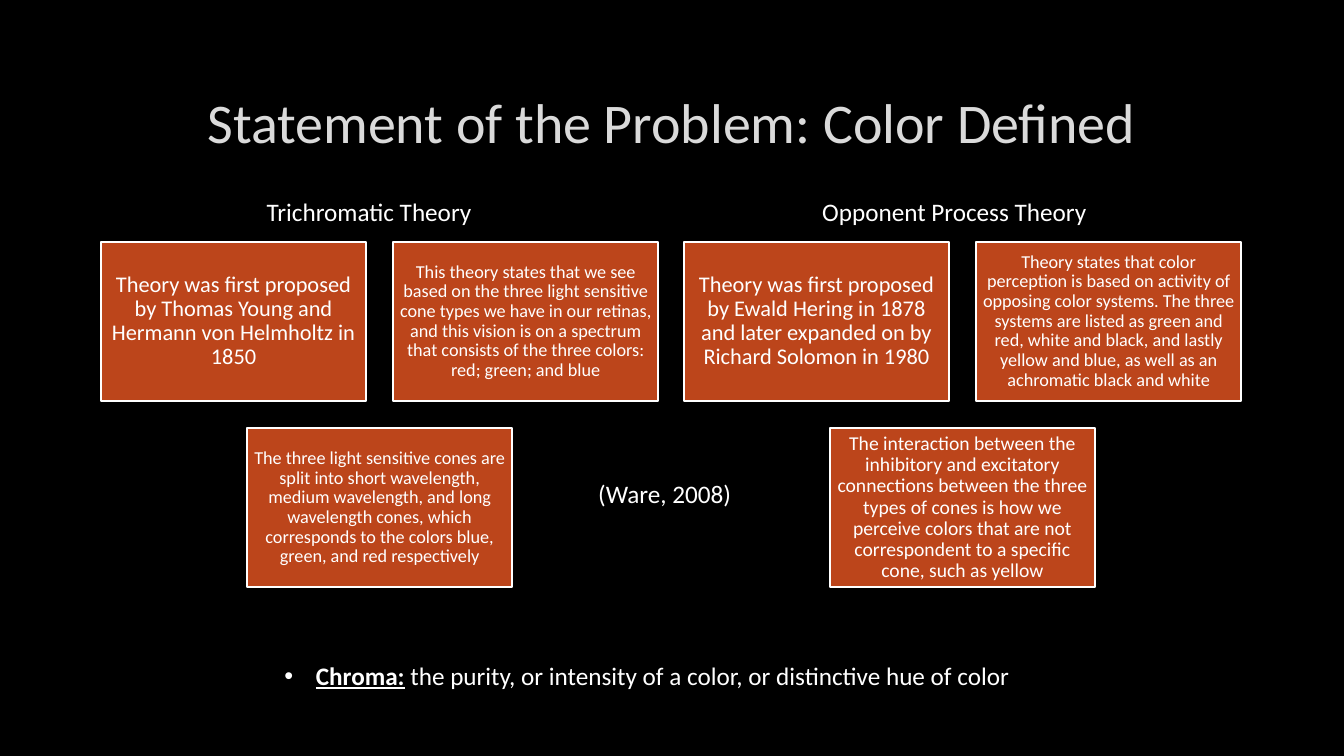
"""Build the slide that compares two theories of color vision."""
from lxml.etree import SubElement
from pptx import Presentation
from pptx.dml.color import RGBColor
from pptx.enum.shapes import MSO_SHAPE as Shape
from pptx.enum.text import MSO_ANCHOR as Anchor, PP_ALIGN as Align
from pptx.oxml import parse_xml
from pptx.oxml.ns import nsdecls, qn
from pptx.util import Pt


def color(hex_code):
    return RGBColor.from_string(hex_code)


def write(frame, text, size, hex_code="FFFFFF", align=Align.LEFT):
    frame.text = text
    frame.word_wrap = True
    paragraph = frame.paragraphs[0]
    paragraph.alignment = align
    run = paragraph.runs[0]
    run.font.name = "Calibri"
    run.font.size = Pt(size)
    run.font.color.rgb = color(hex_code)
    return paragraph


deck = Presentation()
deck.slide_width, deck.slide_height = Pt(960), Pt(540)
slide = deck.slides.add_slide(deck.slide_layouts[6])
slide.background.fill.solid()
slide.background.fill.fore_color.rgb = color("000000")

title = slide.shapes.add_textbox(Pt(72), Pt(48), Pt(815), Pt(76.5)).text_frame
title.vertical_anchor = Anchor.MIDDLE
heading = write(title, "Statement of the Problem: Color Defined", 40, "DADADA", Align.CENTER)
heading.runs[0].font._element.insert(0, parse_xml(
    f'<a:ln {nsdecls("a")} w="9525"><a:solidFill><a:srgbClr val="404040">'
    '<a:alpha val="10000"/></a:srgbClr></a:solidFill></a:ln>'))

CARD_WIDTH, CARD_HEIGHT = 189.7, 113.8
CARD_SPOTS = [(0, 0), (208.6, 0), (104.3, 133.1)]
TOP = 172.6
theories = [
    (72, [
        ("Theory was first proposed by Thomas Young and Hermann von Helmholtz in 1850", 16, 4.8),
        ("This theory states that we see based on the three light sensitive cone types we have "
         "in our retinas, and this vision is on a spectrum that consists of the three colors: "
         "red; green; and blue", 13, 3.9),
        ("The three light sensitive cones are split into short wavelength, medium wavelength, "
         "and long wavelength cones, which corresponds to the colors blue, green, and red "
         "respectively", 13, 3.9),
    ]),
    (488.4, [
        ("Theory was first proposed by Ewald Hering in 1878 and later expanded on by Richard "
         "Solomon in 1980", 16, 4.8),
        ("Theory states that color perception is based on activity of opposing color systems. "
         "The three systems are listed as green and red, white and black, and lastly yellow and "
         "blue, as well as an achromatic black and white", 13, 3.9),
        ("The interaction between the inhibitory and excitatory connections between the three "
         "types of cones is how we perceive colors that are not correspondent to a specific "
         "cone, such as yellow", 14, 4.2),
    ]),
]
for theory_left, statements in theories:
    for (across, down), (statement, size, inset) in zip(CARD_SPOTS, statements):
        card = slide.shapes.add_shape(Shape.RECTANGLE, Pt(theory_left + across), Pt(TOP + down),
                                      Pt(CARD_WIDTH), Pt(CARD_HEIGHT))
        card.shadow.inherit = False
        card.fill.solid()
        card.fill.fore_color.rgb = color("BC451B")
        card.line.color.rgb = color("FFFFFF")
        card.line.width = Pt(1.25)
        frame = card.text_frame
        frame.margin_left = frame.margin_right = Pt(inset)
        frame.margin_top = frame.margin_bottom = Pt(inset)
        frame.vertical_anchor = Anchor.MIDDLE
        write(frame, statement, size, align=Align.CENTER).line_spacing = 0.9

labels = [
    ("Trichromatic Theory", 183.4, 137, 176),
    ("Opponent Process Theory", 580.2, 137, 215),
    ("(Ware, 2008)", 420.2, 338, 119),
]
for label, left, top, width in labels:
    write(slide.shapes.add_textbox(Pt(left), Pt(top), Pt(width), Pt(29)).text_frame, label, 18)

chroma = slide.shapes.add_textbox(Pt(196), Pt(468), Pt(567), Pt(29)).text_frame
definition = write(chroma, "Chroma:", 18)
term = definition.runs[0].font
term.bold = term.underline = True
meaning = definition.add_run()
meaning.text = " the purity, or intensity of a color, or distinctive hue of color"
meaning.font.name = "Calibri"
meaning.font.size = Pt(18)
meaning.font.color.rgb = color("FFFFFF")
bullet = definition._p.get_or_add_pPr()
bullet.set("marL", str(Pt(22.5)))
bullet.set("indent", str(-Pt(22.5)))
SubElement(bullet, qn("a:buFont")).set("typeface", "Arial")
SubElement(bullet, qn("a:buChar")).set("char", "•")

deck.save("out.pptx")
